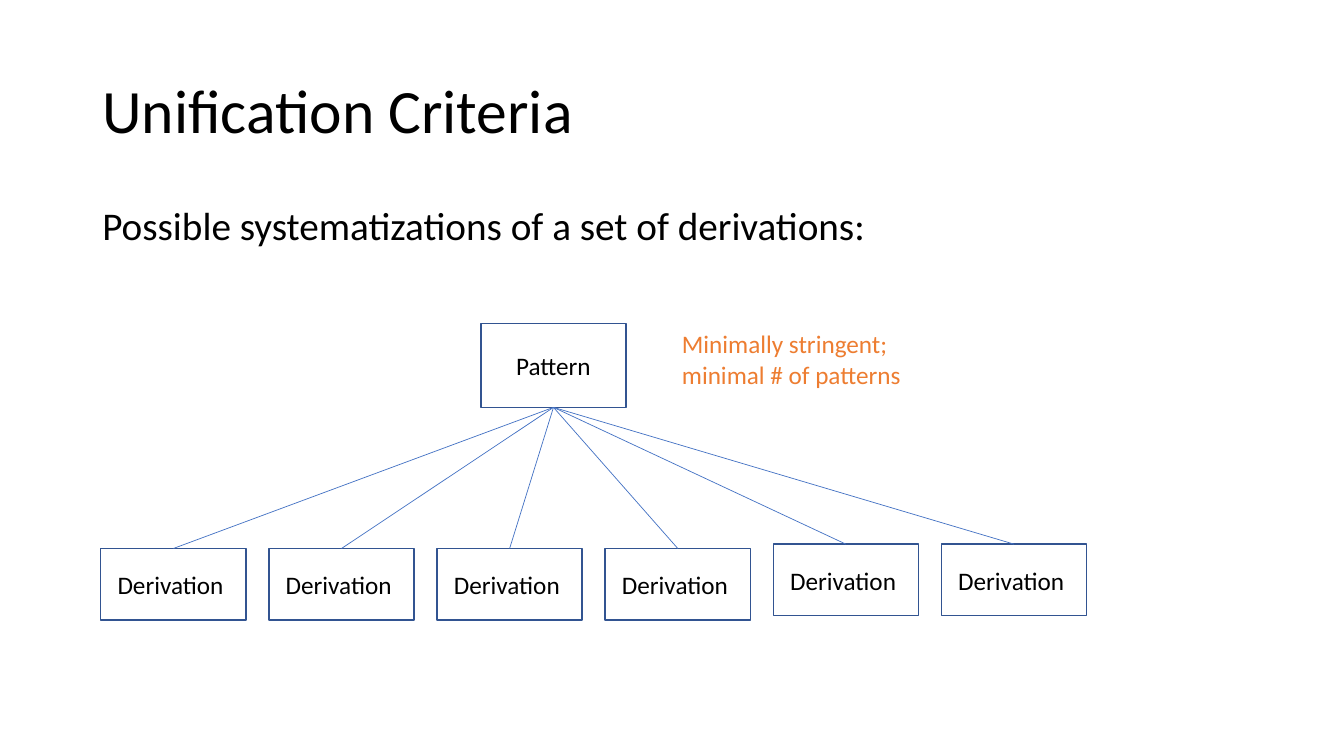
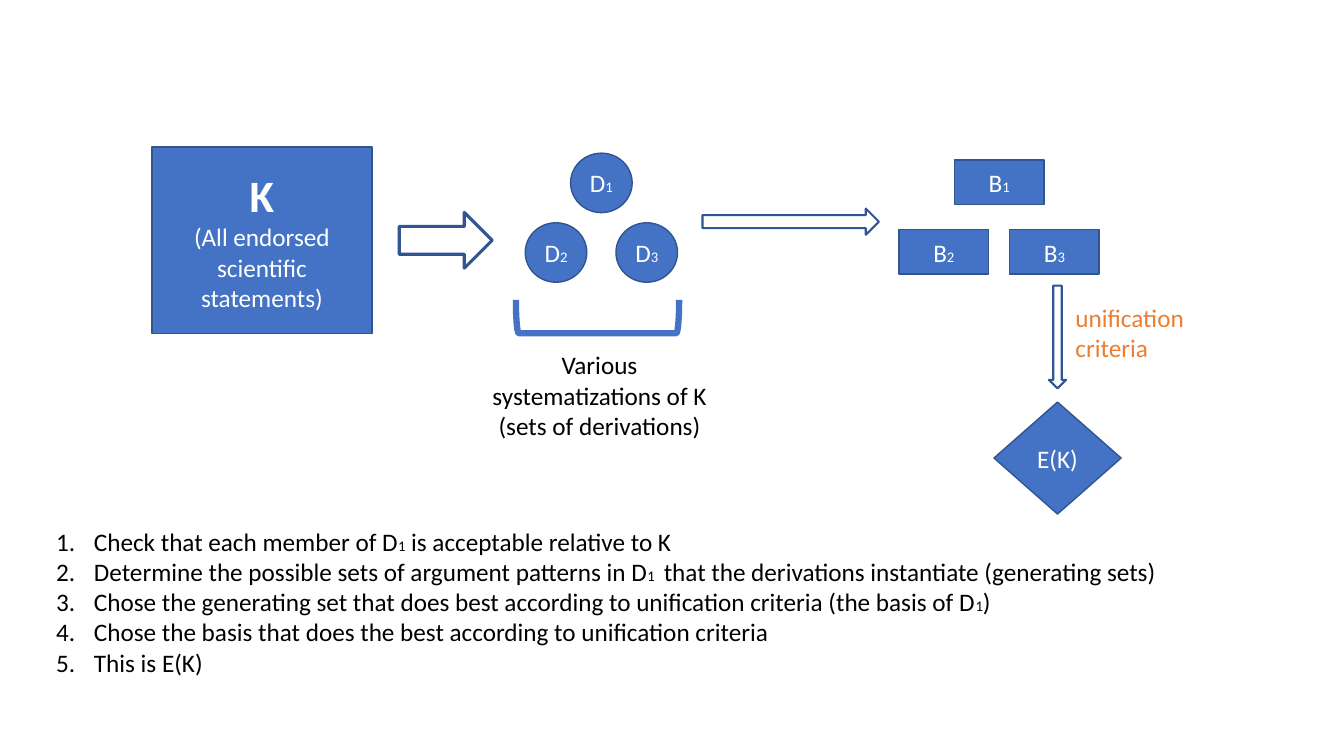
import dataclasses

import pptx
import pptx.dml.color
import pptx.enum.shapes
import pptx.enum.text
import pptx.util
from lxml import etree

Pt = pptx.util.Pt
Kind = pptx.enum.shapes.MSO_SHAPE
Align = pptx.enum.text.PP_ALIGN
Anchor = pptx.enum.text.MSO_ANCHOR


def color(value):
    return pptx.dml.color.RGBColor.from_string(value)


@dataclasses.dataclass(frozen=True)
class Theme:
    font: str = "Calibri"
    ink: str = "000000"
    paper: str = "FFFFFF"
    blue: str = "4472C4"
    outline: str = "325491"
    accent: str = "ED7D31"
    title_size: float = 44
    lead_size: float = 28
    heading_size: float = 32
    text_size: float = 18
    index_size: float = 10.5
    thin: float = 0.5
    line: float = 1
    arrow_line: float = 1.5
    bold_arrow_line: float = 2.25
    bracket_line: float = 4.5


@dataclasses.dataclass(frozen=True)
class Box:
    left: float
    top: float
    width: float
    height: float

    def inner(self, left, top, width, height):
        return Box(self.left + left, self.top + top, width, height)

    def lengths(self):
        return [Pt(value) for value in (self.left, self.top, self.width, self.height)]


THEME = Theme()
STEPS = [
    "Check that each member of D|1| is acceptable relative to K",
    "Determine the possible sets of argument patterns in D|1 | that the derivations instantiate (generating sets)",
    "Chose the generating set that does best according to unification criteria (the basis of D|1|)",
    "Chose the basis that does the best according to unification criteria",
    "This is E(K)",
]


def write(frame, lines, ink=THEME.ink, size=THEME.text_size, align=Align.LEFT, anchor=Anchor.TOP):
    """Text between bars is set as a small index."""
    frame.word_wrap = True
    frame.vertical_anchor = anchor
    for number, line in enumerate(lines):
        paragraph = frame.add_paragraph() if number else frame.paragraphs[0]
        paragraph.alignment = align
        paragraph.font.name = THEME.font
        paragraph.font.size = Pt(size)
        paragraph.font.color.rgb = color(ink)
        for position, part in enumerate(line.split("|")):
            if part:
                run = paragraph.add_run()
                run.text = part
                if position % 2:
                    run.font.size = Pt(THEME.index_size)
    return frame.paragraphs


def add_text(slide, box, lines, **style):
    return write(slide.shapes.add_textbox(*box.lengths()).text_frame, lines, **style)


def add_shape(slide, kind, box, fill=THEME.blue, line=THEME.outline, weight=THEME.line):
    shape = slide.shapes.add_shape(kind, *box.lengths())
    shape.shadow.inherit = False
    if fill:
        shape.fill.solid()
        shape.fill.fore_color.rgb = color(fill)
    else:
        shape.fill.background()
    shape.line.color.rgb = color(line)
    shape.line.width = Pt(weight)
    return shape


def add_node(slide, kind, box, lines, fill=THEME.blue, ink=THEME.paper):
    shape = add_shape(slide, kind, box, fill)
    write(shape.text_frame, lines, ink, align=Align.CENTER, anchor=Anchor.MIDDLE)
    return shape


def add_branch(slide, parent, child):
    connector = slide.shapes.add_connector(pptx.enum.shapes.MSO_CONNECTOR.STRAIGHT, 0, 0, 0, 0)
    connector.begin_connect(parent, 2)
    connector.end_connect(child, 0)
    connector.line.color.rgb = color(THEME.blue)
    connector.line.width = Pt(THEME.thin)
    etree.SubElement(connector.element.spPr, pptx.oxml.ns.qn("a:effectLst"))


def add_arrow(slide, kind, box, weight):
    add_shape(slide, kind, box, THEME.paper, weight=weight)


def add_title(slide, box, text):
    title = slide.shapes.title
    title.left, title.top, title.width, title.height = box.lengths()
    paragraph = write(title.text_frame, [text], size=THEME.title_size, anchor=Anchor.MIDDLE)[0]
    paragraph.line_spacing = 0.9


def add_derivation_tree(slide, box):
    node = {"fill": THEME.paper, "ink": THEME.ink}
    pattern = add_node(slide, Kind.RECTANGLE, box.inner(271.5, 0, 103.7, 59.8), ["Pattern"], **node)
    add_text(slide, box.inner(408, 0, 215, 51), ["Minimally stringent; minimal # of patterns"], ink=THEME.accent)
    for column in range(6):
        top = 160.6 if column < 4 else 157.5
        place = box.inner(120.1 * column, top, 103.7, 51.1)
        derivation = add_node(slide, Kind.RECTANGLE, place, ["Derivation "], **node)
        add_branch(slide, pattern, derivation)


def add_trio(slide, kind, box, letter, width, height):
    pitch = box.width - width
    bottom = box.height - height
    for index, (left, top) in enumerate([(pitch / 2, 0), (0, bottom), (pitch, bottom)], 1):
        add_node(slide, kind, box.inner(left, top, width, height), [f"{letter}|{index}"])


def add_statements(slide, box):
    shape = add_node(slide, Kind.RECTANGLE, box, ["K", "(All endorsed scientific statements)"])
    heading = shape.text_frame.paragraphs[0]
    heading.font.size = Pt(THEME.heading_size)
    heading.font.bold = True


def add_systematizations(slide, box):
    add_trio(slide, Kind.OVAL, box.inner(31, 0, 108.8, 92.2), "D", 44, 42.5)
    bracket = add_shape(slide, Kind.RIGHT_BRACKET, box.inner(70.7, 58.4, 23.8, 116.6), None,
                        THEME.blue, THEME.bracket_line)
    bracket.rotation = 90
    add_text(slide, box.inner(0, 136.8, 168, 94.3),
             ["Various systematizations of K (sets of derivations)"], align=Align.CENTER)


def add_bases(slide, box):
    add_trio(slide, Kind.RECTANGLE, box.inner(0, 0, 143, 81.5), "B", 64, 31.8)
    add_arrow(slide, Kind.DOWN_ARROW, box.inner(107.1, 89.6, 12.2, 73.4), THEME.arrow_line)
    add_text(slide, box.inner(118.9, 98, 93, 51), ["unification criteria"], ink=THEME.accent)
    add_node(slide, Kind.DIAMOND, box.inner(67.8, 172.8, 90.8, 80), ["E(K)"])


def add_steps(slide, box):
    for paragraph in add_text(slide, box, STEPS):
        properties = paragraph._p.get_or_add_pPr()
        properties.set("marL", str(Pt(27)))
        properties.set("indent", str(-Pt(27)))
        numbering = etree.SubElement(properties, pptx.oxml.ns.qn("a:buAutoNum"), type="arabicPeriod")
        properties.remove(numbering)
        properties.insert_element_before(numbering, "a:tabLst", "a:defRPr", "a:extLst")


def build_criteria_slide(presentation, box):
    slide = presentation.slides.add_slide(presentation.slide_layouts[5])
    add_title(slide, box.inner(66, 28.8, 828, 104.4), "Unification Criteria")
    lead = add_text(slide, box.inner(66, 144, 828, 50),
                    ["Possible systematizations of a set of derivations:"], size=THEME.lead_size)[0]
    lead.line_spacing = 0.9
    add_derivation_tree(slide, box.inner(72, 231.2, 704, 212))


def build_process_slide(presentation, box):
    slide = presentation.slides.add_slide(presentation.slide_layouts[6])
    add_statements(slide, box.inner(108.6, 105, 157, 133.2))
    add_arrow(slide, Kind.RIGHT_ARROW, box.inner(285.2, 151.8, 66.4, 39.8), THEME.bold_arrow_line)
    add_systematizations(slide, box.inner(344.2, 109.4, 168, 231))
    add_arrow(slide, Kind.RIGHT_ARROW, box.inner(501.8, 149, 126, 18.7), THEME.arrow_line)
    add_bases(slide, box.inner(642.2, 114.4, 212, 253))
    add_steps(slide, box.inner(33, 372.2, 836.6, 116.6))


def main():
    presentation = pptx.Presentation()
    page = Box(0, 0, 960, 540)
    presentation.slide_width = Pt(page.width)
    presentation.slide_height = Pt(page.height)
    build_criteria_slide(presentation, page)
    build_process_slide(presentation, page)
    presentation.save("out.pptx")


if __name__ == "__main__":
    main()
